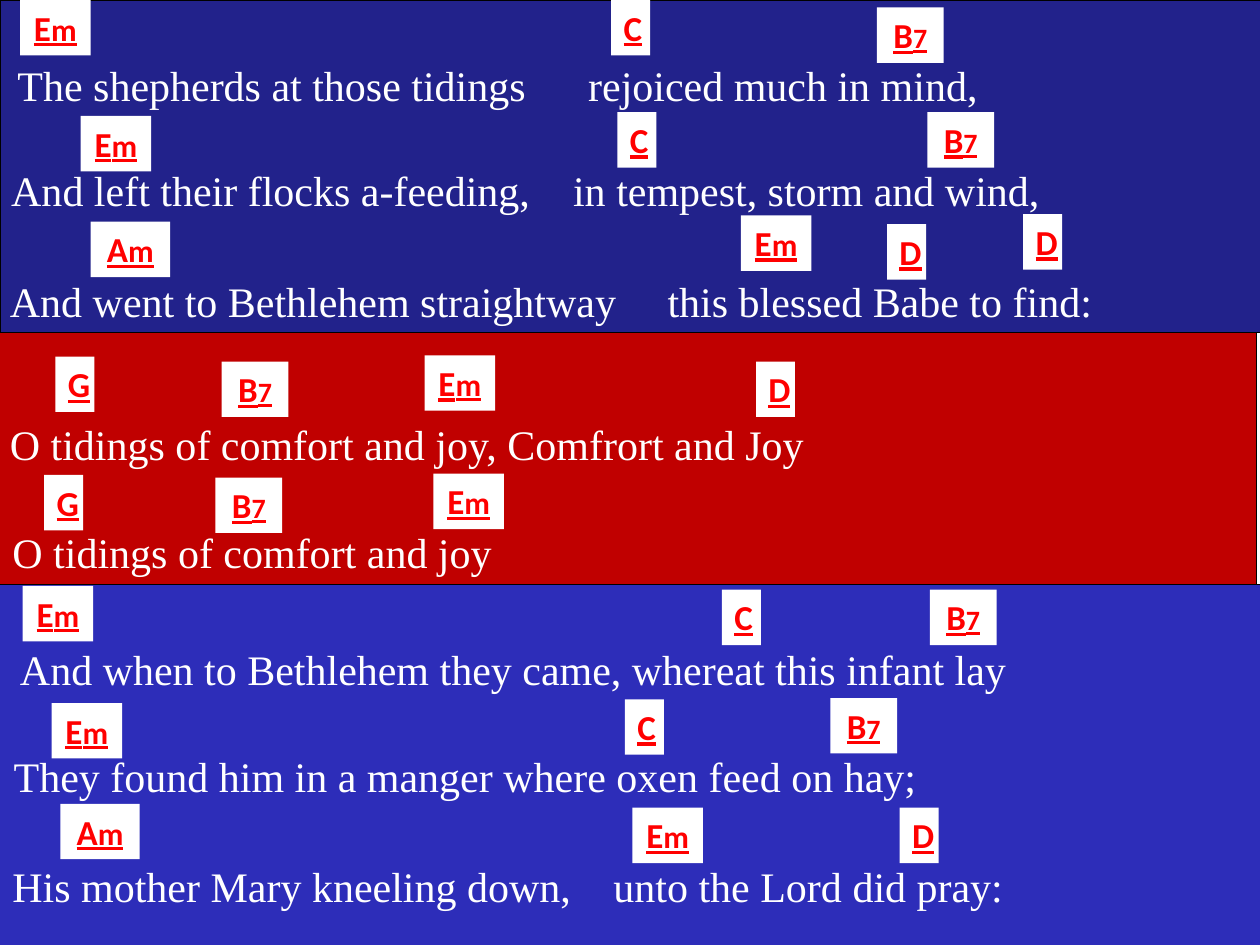
from lxml import etree
from pptx import Presentation
from pptx import util as u
from pptx.dml.color import RGBColor
from pptx.enum import shapes, text
from pptx.oxml import ns

RED = RGBColor(0xC0, 0x00, 0x00)
NAVY = RGBColor(0x22, 0x22, 0x8B)
BLUE = RGBColor(0x2D, 0x2D, 0xB9)
WHITE = RGBColor(0xFF, 0xFF, 0xFF)
BLACK = RGBColor(0x00, 0x00, 0x00)
NOTE = RGBColor(0xFF, 0x00, 0x00)

WIDE, HIGH = u.Inches(10), u.Inches(7.5)
COL, ROW = WIDE / 100, HIGH / 75
FULL = 100.2
WIDTHS = {"Em": 5.6, "Am": 6.3, "B7": 5.3, "C": 3.1, "D": 3.1, "G": 3.1}
SIZES = {"m": 18, "7": 16}

REFRAIN = [
    (0.3, 6.3, "O tidings of comfort and joy, Comfrort and Joy", None,
     [("G", 4.9, 1.9), ("B7", 18.1, 2.3), ("Em", 34.2, 1.8), ("D", 60.5, 2.3)]),
    (0.5, 14.9, "O tidings of comfort and joy", None,
     [("G", 4, 11.3), ("B7", 17.6, 11.5), ("Em", 34.9, 11.2)]),
]
VERSE_A = [
    (0.4, 4.2, "The shepherds at those tidings\trejoiced much in mind,", 45.3,
     [("Em", 1.6, 0), ("C", 48.5, 0), ("B7", 69.6, 0.6)]),
    (-0.1, 12.6, "And left their flocks a-feeding,\tin tempest, storm and wind,", 44.6,
     [("Em", 6.4, 9.2), ("C", 49, 8.9), ("B7", 73.6, 8.9)]),
    (-0.2, 21.4, "And went to Bethlehem straightway\tthis blessed Babe to find:", 52.2,
     [("Am", 7.2, 17.6), ("Em", 58.8, 17.1), ("D", 70.4, 17.8), ("D", 81.2, 17)]),
]
VERSE_B = [
    (0.7, 4.2, "And when to Bethlehem they came, whereat this infant lay", None,
     [("Em", 1.9, 0.1), ("C", 57.4, 0.4), ("B7", 73.9, 0.4)]),
    (0.2, 12.7, "They found him in a manger where oxen feed on hay;", None,
     [("Em", 4.2, 9.4), ("C", 49.7, 9.1), ("B7", 66, 9)]),
    (0.1, 21.4, "His mother Mary kneeling down,\tunto the Lord did pray:", 47.7,
     [("Am", 4.9, 17.4), ("Em", 50.3, 17.7), ("D", 71.5, 17.7)]),
]


def place(x, y, w, h):
    """Turn grid columns and rows into a position and size."""
    return round(x * COL), round(y * ROW), round(w * COL), round(h * ROW)


def block(slide, box, fill, edge=None):
    """Draw a flat rectangle in the given grid box."""
    rect = slide.shapes.add_shape(shapes.MSO_SHAPE.RECTANGLE, *place(*box))
    rect.shadow.inherit = False
    rect.fill.solid()
    rect.fill.fore_color.rgb = fill
    if edge is None:
        rect.line.fill.background()
    else:
        rect.line.color.rgb = edge
        rect.line.width = u.Pt(0.75)
    return rect


def write(shape, runs, face, color, bold=False, line=False, align=text.PP_ALIGN.LEFT):
    """Write (words, size) runs into a shape and return the paragraph."""
    frame = shape.text_frame
    frame.word_wrap = True
    frame.auto_size = text.MSO_AUTO_SIZE.SHAPE_TO_FIT_TEXT
    frame.vertical_anchor = text.MSO_ANCHOR.TOP
    para = frame.paragraphs[0]
    para.alignment = align
    for words, size in runs:
        run = para.add_run()
        run.text = words
        font = run.font
        font.name, font.size = face, u.Pt(size)
        font.bold, font.underline = bold, line
        font.color.rgb = color
    return para


def lyric(slide, x, y, words, stop):
    """Place one sung line, with a tab stop between its halves."""
    box = slide.shapes.add_textbox(*place(x, y, FULL, 5))
    para = write(box, [(words, 24)], "Times New Roman", WHITE)
    if stop:
        props = para._p.get_or_add_pPr()
        tabs = etree.SubElement(props, ns.qn("a:tabLst"))
        etree.SubElement(tabs, ns.qn("a:tab"), pos=str(round(stop * COL)), algn="l")


def chord(slide, x, y, name):
    """Place one chord label."""
    tag = block(slide, (x, y, WIDTHS[name], 4.4), WHITE)
    runs = [(sign, SIZES.get(sign, 20)) for sign in name]
    write(tag, runs, "Calibri", NOTE, bold=True, line=True, align=text.PP_ALIGN.CENTER)


def verse(slide, box, fill, lines):
    """Fill a colour band with lyrics and chords placed from its corner."""
    left, top = box[:2]
    block(slide, box, fill, BLACK)
    for x, y, words, stop, chords in lines:
        lyric(slide, left + x, top + y, words, stop)
        for name, across, down in chords:
            chord(slide, left + across, top + down, name)


def main():
    """Build the song slide."""
    deck = Presentation()
    deck.slide_width, deck.slide_height = WIDE, HIGH
    slide = deck.slides.add_slide(deck.slide_layouts[6])
    verse(slide, (-0.5, 26.4, FULL, 20), RED, REFRAIN)
    verse(slide, (0, 0, FULL, 26.4), NAVY, VERSE_A)
    verse(slide, (-0.1, 46.4, FULL, 28.7), BLUE, VERSE_B)
    deck.save("out.pptx")


if __name__ == "__main__":
    main()
